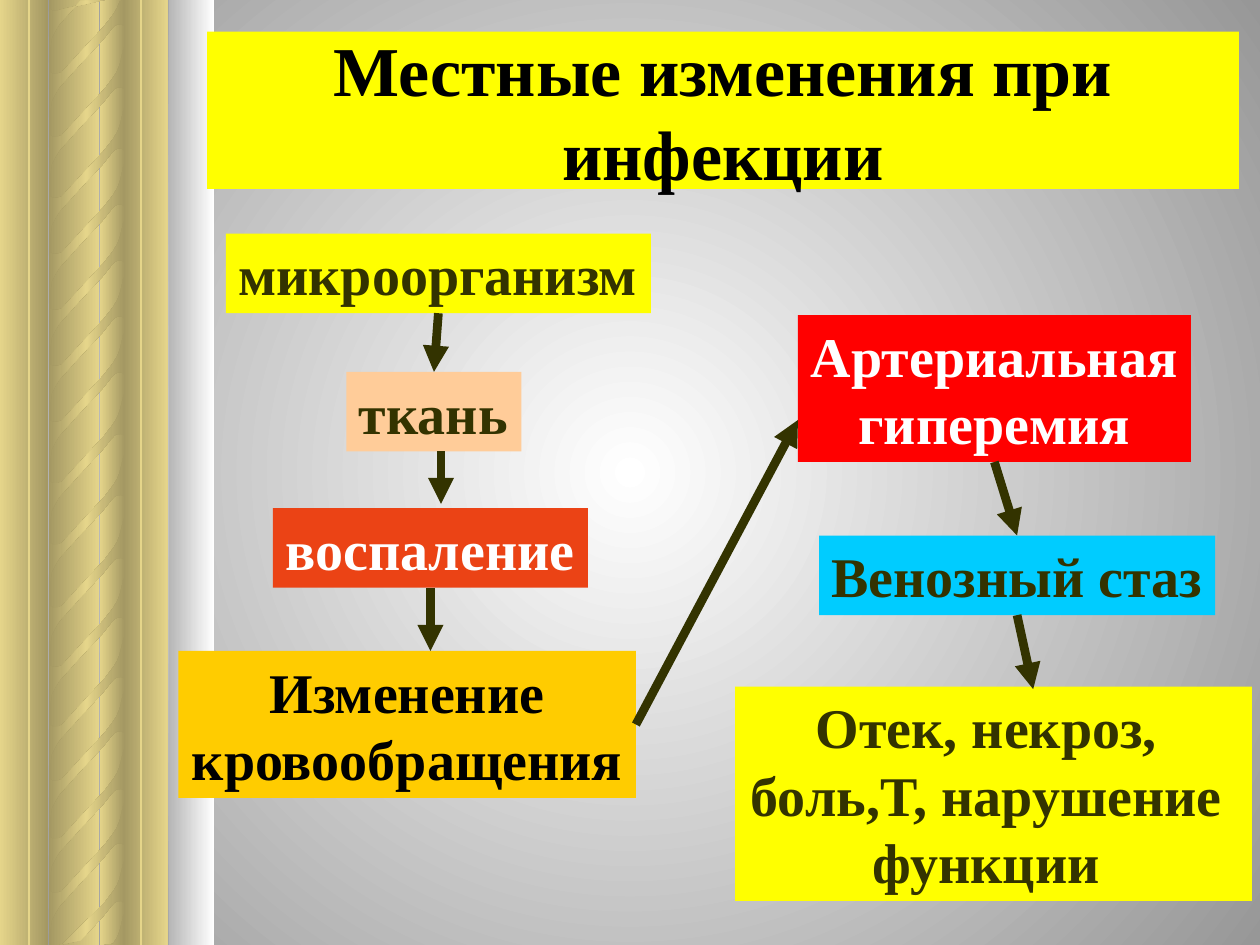
from dataclasses import dataclass
from typing import Optional

import lxml.etree
import pptx
import pptx.dml.color
import pptx.enum.shapes
import pptx.enum.text
import pptx.oxml
import pptx.oxml.ns
import pptx.util

Pt = pptx.util.Pt
ALIGN = pptx.enum.text.PP_ALIGN
ANCHOR = pptx.enum.text.MSO_ANCHOR
RECT = pptx.enum.shapes.MSO_SHAPE.RECTANGLE
TOP, LEFT, BOTTOM, RIGHT = range(4)
W, H = 720, 540
FONT = "Times New Roman"

COLORS = {
    "white": "FFFFFF", "black": "000000", "gray": "979797", "silver": "B6B6B6",
    "gold": "E5D58A", "bronze": "A49863", "olive": "333300", "yellow": "FFFF00",
    "peach": "FFCC99", "orange": "EB4315", "amber": "FFCC00", "red": "FF0000",
    "cyan": "00CCFF",
}


@dataclass
class Band:
    x: float
    w: float
    start: str
    end: str


@dataclass
class Box:
    name: str
    lines: list[str]
    x: float
    y: float
    w: float
    h: float
    fill: str
    color: str = "olive"
    align: int = ALIGN.LEFT
    size: float = 32
    wrap: bool = False
    anchor: int = ANCHOR.TOP
    right_inset: float = 7.2


@dataclass
class Arrow:
    x1: float
    y1: float
    x2: float
    y2: float
    begin: Optional[tuple[str, int]] = None
    end: Optional[tuple[str, int]] = None


# Column: shaded bands, thin highlights and a twisted ribbon
BANDS = [
    Band(56.9, 14.4, "gold", "bronze"),
    Band(0, 27.4, "gold", "bronze"),
    Band(28.1, 28.8, "bronze", "gold"),
    Band(70.6, 25.2, "bronze", "gold"),
]
SHADE = Band(96.5, 25.9, "silver", "white")
HIGHLIGHTS = [16.6, 80.6]
RIBBON_TOPS = [-45, -9, 27, 62, 94, 126, 158, 190, 225,
               260, 296, 330, 364, 395, 428, 459, 492, 522]
RIBBON = [
    (70.8, 6.5), (70.8, 23.8), (69.8, 23), (67, 23), (65.5, 23.8), (63.4, 26),
    (58.3, 32.4), (46, 45.4), (33.8, 59), (31.7, 62.6), (29.5, 67), (28.8, 72.7),
    (28.1, 80.6), (28.1, 45.4), (28.1, 49), (28.8, 50.4), (30.2, 51.1),
    (31.7, 51.1), (33.1, 51.1), (35.3, 50.4), (59.8, 23.8), (64.8, 17.3),
    (67, 13.7), (68.4, 10), (69.8, 4.3), (70.8, 0), (70.8, 14.4),
]

BOXES = [
    Box("title", ["Местные изменения при инфекции"], 118.3, 18, 589.7, 90, "yellow",
        "black", ALIGN.CENTER, 40, True, ANCHOR.MIDDLE),
    Box("microbe", ["микроорганизм"], 129, 133.5, 243, 45.5, "yellow"),
    Box("tissue", ["ткань"], 198, 212.5, 100, 45.5, "peach"),
    Box("inflammation", ["воспаление"], 156, 290.3, 180, 45.5, "orange", "white"),
    Box("circulation", ["Изменение", "кровообращения"], 102, 372, 261.4, 84,
        "amber", "black", ALIGN.CENTER),
    Box("hyperemia", ["Артериальная", "гиперемия"], 456, 180, 224.5, 84,
        "red", "white", ALIGN.CENTER),
    Box("stasis", ["Венозный стаз"], 468, 306, 226.4, 45.5, "cyan"),
    Box("outcome", ["Отек, некроз,", "боль,T, нарушение", "функции"], 420, 392.4,
        295.4, 122.5, "yellow", align=ALIGN.CENTER, right_inset=15.2),
]

ARROWS = [
    Arrow(250.5, 179, 248, 212.5, ("microbe", BOTTOM), ("tissue", TOP)),
    Arrow(252, 258, 252, 288),
    Arrow(246, 335.8, 246, 372, ("inflammation", BOTTOM)),
    Arrow(363.4, 414, 456, 240, ("circulation", RIGHT)),
    Arrow(568.3, 264, 581.2, 306, ("hyperemia", BOTTOM), ("stasis", TOP)),
    Arrow(581.2, 351.5, 590.4, 393.8, ("stasis", BOTTOM)),
]


def rgb(name: str) -> pptx.dml.color.RGBColor:
    return pptx.dml.color.RGBColor.from_string(COLORS[name])


def set_gradient(owner, fill, names: list[str], radial: bool = False) -> None:
    """Fill with evenly spaced colours, left to right or outwards from the centre."""
    fill.gradient()
    old = owner._element.find(".//" + pptx.oxml.ns.qn("a:gradFill"))
    stops = "".join(
        f'<a:gs pos="{100000 * i // (len(names) - 1)}"><a:srgbClr val="{COLORS[n]}"/></a:gs>'
        for i, n in enumerate(names))
    shade = ('<a:path path="circle"><a:fillToRect l="50000" t="50000" r="50000" b="50000"/>'
             "</a:path>" if radial else '<a:lin ang="0" scaled="1"/>')
    new = pptx.oxml.parse_xml(
        f'<a:gradFill {pptx.oxml.ns.nsdecls("a")} rotWithShape="1">'
        f"<a:gsLst>{stops}</a:gsLst>{shade}</a:gradFill>")
    old.getparent().replace(old, new)


def add_band(s, b: Band) -> None:
    sp = s.shapes.add_shape(RECT, Pt(b.x), 0, Pt(b.w), Pt(H))
    sp.shadow.inherit = False
    sp.line.fill.background()
    set_gradient(sp, sp.fill, [b.start, b.end])


def add_ribbon(s, top: float) -> None:
    """One turn of the ribbon, cut off at the slide edges."""
    points = [(Pt(x), Pt(min(max(top + y, 0), H))) for x, y in RIBBON]
    builder = s.shapes.build_freeform(*points[0], scale=1.0)
    builder.add_line_segments(points[1:], close=True)
    sp = builder.convert_to_shape()
    sp.shadow.inherit = False
    sp.line.fill.background()
    set_gradient(sp, sp.fill, ["bronze", "gold", "bronze"])


def add_line(s, a: Arrow, color: str, width: float):
    c = s.shapes.add_connector(pptx.enum.shapes.MSO_CONNECTOR.STRAIGHT,
                               Pt(a.x1), Pt(a.y1), Pt(a.x2), Pt(a.y2))
    c.line.color.rgb = rgb(color)
    c.line.width = Pt(width)
    lxml.etree.SubElement(c._element.spPr, pptx.oxml.ns.qn("a:effectLst"))
    return c


def add_arrow(s, a: Arrow, shapes: dict) -> None:
    c = add_line(s, a, "olive", 5)
    lxml.etree.SubElement(c.line._get_or_add_ln(), pptx.oxml.ns.qn("a:tailEnd"),
                          type="triangle")
    if a.begin:
        c.begin_connect(shapes[a.begin[0]], a.begin[1])
    if a.end:
        c.end_connect(shapes[a.end[0]], a.end[1])


def add_box(s, b: Box):
    sp = s.shapes.add_shape(RECT, Pt(b.x), Pt(b.y), Pt(b.w), Pt(b.h))
    sp.shadow.inherit = False
    sp.fill.solid()
    sp.fill.fore_color.rgb = rgb(b.fill)
    sp.line.fill.background()
    tf = sp.text_frame
    tf.word_wrap = b.wrap
    tf.vertical_anchor = b.anchor
    tf.margin_right = Pt(b.right_inset)
    tf.text = "\n".join(b.lines)
    for p in tf.paragraphs:
        p.alignment = b.align
        p.font.name = FONT
        p.font.size = Pt(b.size)
        p.font.bold = True
        p.font.color.rgb = rgb(b.color)
    return sp


def main() -> None:
    prs = pptx.Presentation()
    prs.slide_width, prs.slide_height = Pt(W), Pt(H)
    s = prs.slides.add_slide(prs.slide_layouts[6])
    set_gradient(s, s.background.fill, ["white", "gray"], radial=True)

    # Decorative column
    for band in BANDS:
        add_band(s, band)
    for top in RIBBON_TOPS:
        add_ribbon(s, top)
    add_band(s, SHADE)
    for x in HIGHLIGHTS:
        add_line(s, Arrow(x, 0, x, H), "gold", 1)

    # Title, flow boxes and arrows
    shapes = {b.name: add_box(s, b) for b in BOXES}
    for arrow in ARROWS:
        add_arrow(s, arrow, shapes)
    prs.save("out.pptx")


if __name__ == "__main__":
    main()
